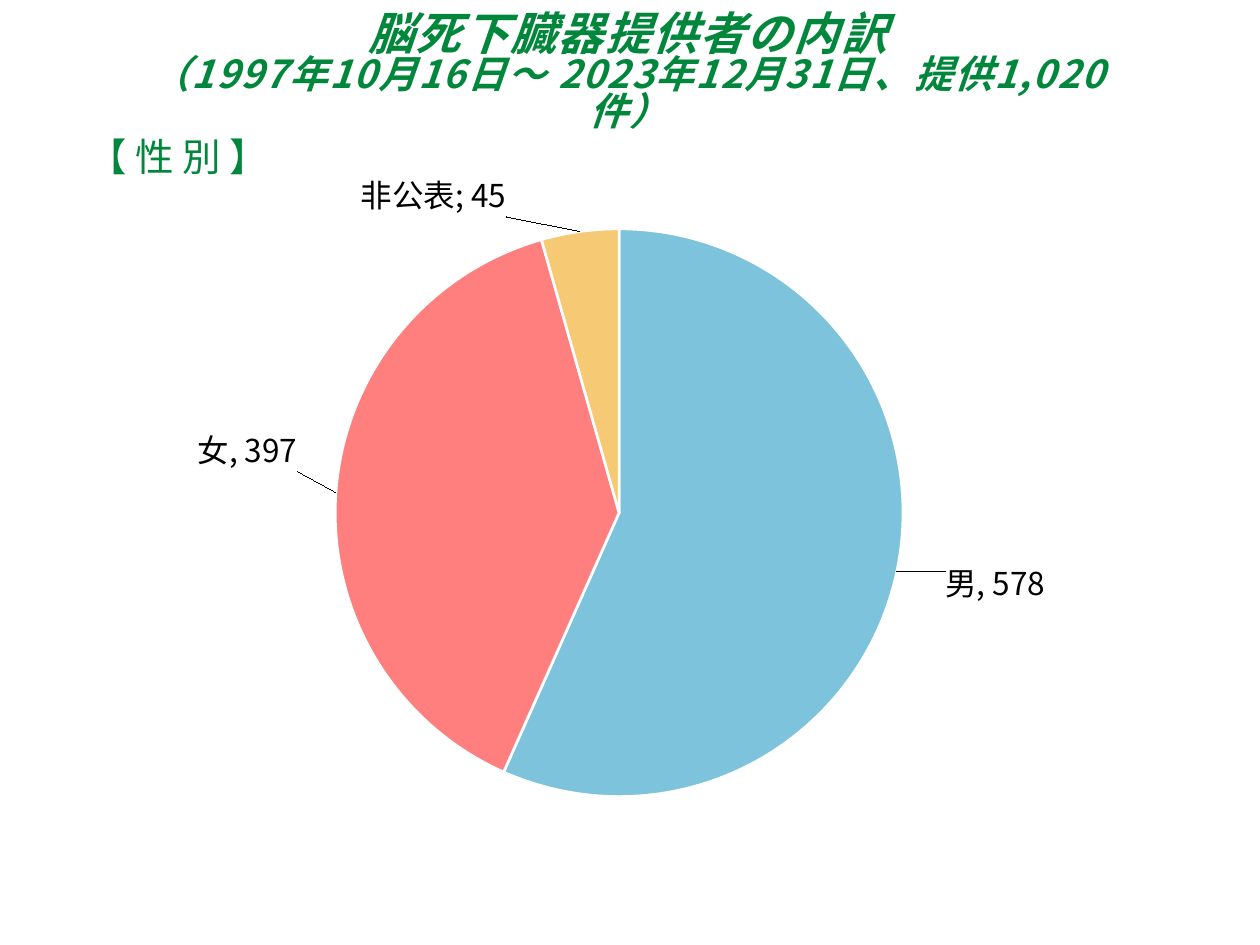
from dataclasses import dataclass

from lxml.etree import SubElement
from pptx import Presentation
from pptx.chart.data import CategoryChartData
from pptx.dml.color import RGBColor
from pptx.enum.chart import XL_CHART_TYPE, XL_LABEL_POSITION
from pptx.enum.text import MSO_ANCHOR, PP_ALIGN
from pptx.oxml.ns import qn
from pptx.util import Emu, Pt

PX = 914400 // 126


@dataclass(frozen=True)
class Theme:
    green: str = "00873C"
    black: str = "000000"
    white: str = "FFFFFF"
    slices: tuple = ("7DC3DC", "FF7F7F", "F6C975")
    heading_font: str = "Arial"
    body_font: str = "Noto Sans CJK JP"
    title_size: int = 26
    subtitle_size: int = 22
    label_size: int = 18
    base_size: int = 10


def px(*lengths):
    return [Emu(length * PX) for length in lengths]


def style_font(font, color, **values):
    for name, value in values.items():
        setattr(font, name, value)
    font.color.rgb = RGBColor.from_string(color)


def add_layout(parent, index, **values):
    """Insert a manual chart layout as the child at the given index."""
    layout = parent.makeelement(qn("c:layout"))
    manual = SubElement(layout, qn("c:manualLayout"))
    for name, value in values.items():
        SubElement(manual, qn(f"c:{name}")).set("val", str(value))
    parent.insert(index, layout)


class SlideBuilder:
    def __init__(self, slide, theme):
        self.slide = slide
        self.theme = theme

    def title(self, box, lines):
        """Fill the title placeholder with (text, size) lines."""
        theme = self.theme
        title = self.slide.shapes.title
        title.left, title.top, title.width, title.height = px(*box)
        frame = title.text_frame
        frame.word_wrap = True
        frame.vertical_anchor = MSO_ANCHOR.MIDDLE
        paragraph = frame.paragraphs[0]
        paragraph.alignment = PP_ALIGN.CENTER
        paragraph.line_spacing = 0.8
        for number, (text, size) in enumerate(lines):
            if number:
                paragraph.add_line_break()
            run = paragraph.add_run()
            run.text = text
            style_font(run.font, theme.green, name=theme.body_font,
                       size=Pt(size), bold=True, italic=True)
            properties = run._r.get_or_add_rPr()
            properties.set("spc", "100")
            SubElement(properties, qn("a:ea")).set("typeface", theme.body_font)

    def heading(self, box, text):
        theme = self.theme
        frame = self.slide.shapes.add_textbox(*px(*box)).text_frame
        frame.word_wrap = True
        run = frame.paragraphs[0].add_run()
        run.text = text
        style_font(run.font, theme.green, name=theme.heading_font,
                   size=Pt(theme.subtitle_size))

    def pie(self, box, counts, plot_area, label_offsets, custom_labels):
        theme = self.theme
        data = CategoryChartData()
        data.categories = list(counts)
        data.add_series("Series 1", list(counts.values()))
        chart = self.slide.shapes.add_chart(
            XL_CHART_TYPE.PIE, *px(*box), data).chart
        chart.has_legend = False
        chart.has_title = False
        style_font(chart.font, theme.black, name=theme.body_font,
                   size=Pt(theme.base_size))
        plot = chart.plots[0]
        plot.vary_by_categories = False
        x, y, w, h = plot_area
        area = next(chart.element.iter(qn("c:plotArea")))
        for old in area.findall(qn("c:layout")):
            area.remove(old)
        add_layout(area, 0, layoutTarget="inner", xMode="edge", yMode="edge",
                   x=x, y=y, w=w, h=h)

        series = plot.series[0]
        labels = series.data_labels
        labels.show_value = labels.show_category_name = True
        style_font(labels.font, theme.black, name=theme.body_font,
                   size=Pt(theme.label_size))
        for index, (category, color) in enumerate(zip(counts, theme.slices)):
            point = series.points[index]
            point.format.fill.solid()
            point.format.fill.fore_color.rgb = RGBColor.from_string(color)
            point.format.line.color.rgb = RGBColor.from_string(theme.white)
            point.format.line.width = Pt(1.5)
            label = point.data_label
            label.position = XL_LABEL_POSITION.OUTSIDE_END
            if category in custom_labels:
                run = label.text_frame.paragraphs[0].add_run()
                run.text = custom_labels[category]
                font = run.font
            else:
                font = label.font
            style_font(font, theme.black, name=theme.body_font,
                       size=Pt(theme.label_size))

        for mark, (dx, dy) in zip(chart.element.iter(qn("c:dLbl")),
                                  label_offsets):
            for old in mark.findall(qn("c:layout")):
                mark.remove(old)
            add_layout(mark, 1, x=dx, y=dy)
            mark.find(qn("c:showCatName")).set("val", "1")


def main():
    deck = Presentation()
    deck.slide_width, deck.slide_height = px(1260, 945)
    theme = Theme()
    builder = SlideBuilder(deck.slides.add_slide(deck.slide_layouts[5]), theme)
    builder.pie(
        (95, 127, 1038, 728),
        {"男": 578, "女": 397, "非公表": 45},
        plot_area=(0.23, 0.14, 0.55, 0.78),
        label_offsets=[(0.04, -0.02), (-0.03, -0.06), (-0.07, -0.01)],
        custom_labels={"男": "男, 578", "女": "女, 397"},
    )
    builder.heading((76, 127, 378, 59), "【 性 別 】")
    builder.title((127, 19, 1004, 110), [
        ("脳死下臓器提供者の内訳", theme.title_size),
        ("（1997年10月16日～ 2023年12月31日、提供1,020件）",
         theme.subtitle_size),
    ])
    deck.save("out.pptx")


if __name__ == "__main__":
    main()
